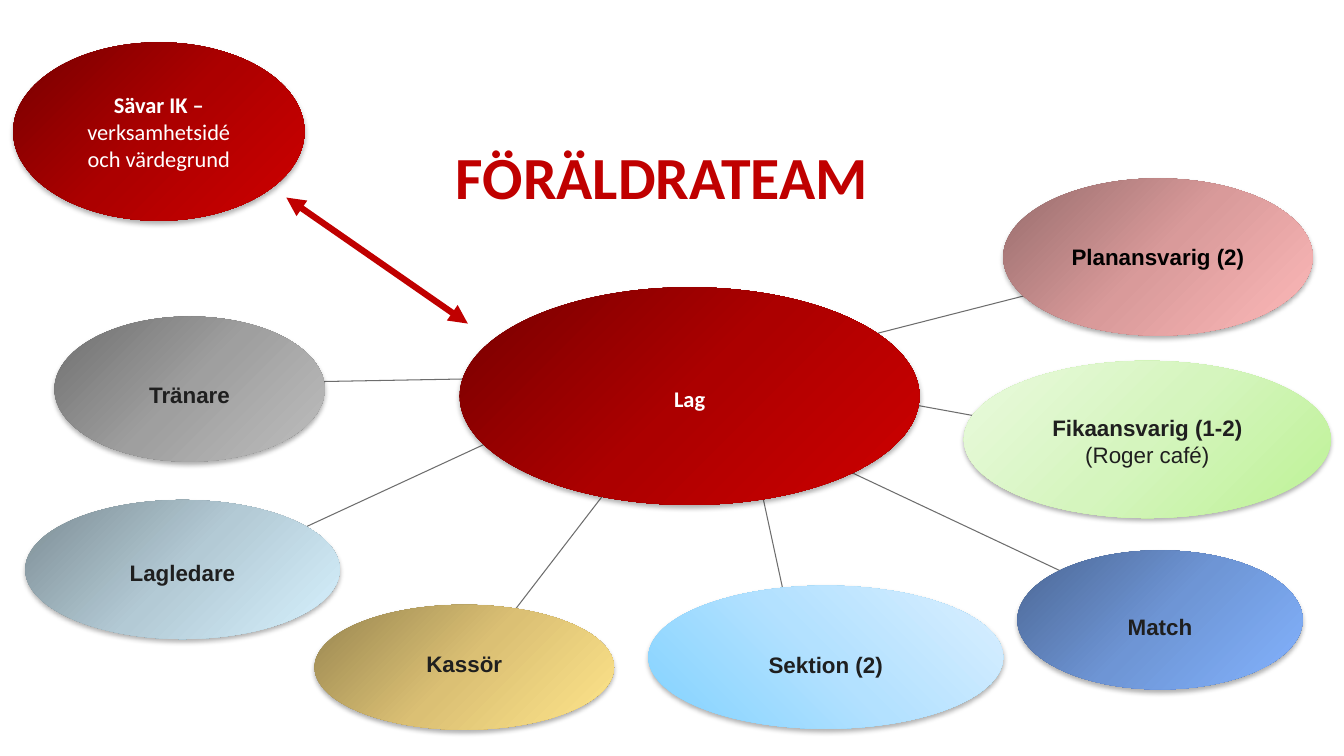
from lxml import etree
from pptx import Presentation
from pptx.dml.color import RGBColor
from pptx.enum.shapes import MSO_CONNECTOR, MSO_SHAPE
from pptx.enum.text import MSO_ANCHOR, MSO_AUTO_SIZE, PP_ALIGN
from pptx.oxml import parse_xml
from pptx.oxml.ns import nsdecls, qn
from pptx.util import Pt

PX = 9144  # 100 px to the inch
OVAL, STRAIGHT = MSO_SHAPE.OVAL, MSO_CONNECTOR.STRAIGHT
CENTER, LEFT = PP_ALIGN.CENTER, PP_ALIGN.LEFT
MIDDLE, TOP = MSO_ANCHOR.MIDDLE, MSO_ANCHOR.TOP

RED = RGBColor(0xC0, 0x00, 0x00)
GREY = RGBColor(0x6D, 0x6D, 0x6D)
WHITE = RGBColor(0xFF, 0xFF, 0xFF)
BLACK = RGBColor(0x00, 0x00, 0x00)
INK = RGBColor(0x1F, 0x1F, 0x1F)


def gradient(*hexes):
    return [RGBColor.from_string(h) for h in hexes]


REDS = gradient("770000", "AC0000", "CE0000")
GREYS = gradient("6E6E6E", "9F9F9F", "BFBFBF")
STEELS = gradient("7C8C93", "B3CAD5", "D7F2FF")
PINKS = gradient("956B6B", "D99A9A", "FFBABA")
BLUES = gradient("4B6693", "6E95D5", "83B3FF")
GREENS = gradient("BDF295", "D5F5BE", "EAFADE")
GOLDS = gradient("978550", "DBC074", "FFE68B")
SKIES = gradient("81D2FF", "B3E1FF", "DAEFFF")

# text, box, colours, gradient angle, text colour, font, text shift down
ROLES = [
    ("Tränare", (54, 314, 268, 144), GREYS, 45, INK, "Arial", 5),
    ("Lagledare", (25, 496, 312, 138), STEELS, 45, INK, "Arial", 3),
    ("Sävar IK –\nverksamhetsidé och värdegrund", (13, 42, 289, 177),
     REDS, 45, WHITE, "Calibri", 0),
    ("Planansvarig (2)", (995, 177, 307, 156), PINKS, 45, BLACK, "Arial", 0),
    ("Lag", (456, 285, 456, 216), REDS, 45, WHITE, "Calibri", 2),
    ("Match", (1009, 546, 283, 138), BLUES, 45, INK, "Arial", 7),
    ("Fikaansvarig (1-2)\n(Roger café)", (956, 358, 364, 156),
     GREENS, 225, INK, "Arial", 2),
    ("Kassör", (312, 600, 297, 124), GOLDS, 45, INK, "Arial", -4),
    ("Sektion (2)", (643, 581, 352, 142), SKIES, 315, INK, "Arial", 7),
]

SPOKES = [
    (294, 379, 514, 375), (266, 540, 534, 416), (490, 632, 623, 459),
    (791, 652, 754, 481), (869, 331, 1049, 285), (1051, 566, 845, 469),
    (1024, 423, 898, 400),
]


def emu(lengths):
    return [n * PX for n in lengths]


def set_margins(tf, left, top, right, bottom):
    tf.margin_left, tf.margin_top, tf.margin_right, tf.margin_bottom = emu(
        (left, top, right, bottom))


def format_font(font, name, size, color, bold):
    font.name, font.size, font.bold = name, Pt(size), bold
    font.color.rgb = color


def set_gradient(sp, colors, angle):
    """Fill with three even stops; the shape's line must already be set."""
    stops = "".join(
        f'<a:gs pos="{i * 50000}"><a:srgbClr val="{c}"/></a:gs>'
        for i, c in enumerate(colors))
    fill = parse_xml(
        f'<a:gradFill {nsdecls("a")} rotWithShape="1"><a:gsLst>{stops}</a:gsLst>'
        f'<a:lin ang="{angle * 60000}" scaled="0"/></a:gradFill>')
    sp._element.spPr.find(qn("a:ln")).addprevious(fill)


def add_shadow(sp):
    sp.shadow.inherit = False
    sp._element.spPr.find(qn("a:effectLst")).append(parse_xml(
        f'<a:outerShdw {nsdecls("a")} blurRad="{Pt(3.5)}" dist="{Pt(2.2)}" '
        'dir="5400000" rotWithShape="0"><a:srgbClr val="000000">'
        '<a:alpha val="31000"/></a:srgbClr></a:outerShdw>'))


def add_role(s, text, box, colors, angle, text_color, font, shift):
    """Add an ellipse whose first line is bold."""
    sp = s.shapes.add_shape(OVAL, *emu(box))
    sp.line.fill.background()
    set_gradient(sp, colors, angle)
    add_shadow(sp)
    tf = sp.text_frame
    tf.word_wrap = True
    tf.vertical_anchor = MIDDLE
    set_margins(tf, 13, 13 + shift, 13, 13 - shift)
    tf.text = text
    for i, p in enumerate(tf.paragraphs):
        p.alignment = CENTER
        format_font(p.runs[0].font, font, 16, text_color, i == 0)


def add_line(s, ends, color, width, arrows=False):
    line = s.shapes.add_connector(STRAIGHT, *emu(ends))
    line.line.color.rgb = color
    line.line.width = Pt(width)
    if arrows:
        for tag in ("a:headEnd", "a:tailEnd"):
            etree.SubElement(line.line._get_or_add_ln(), qn(tag), type="triangle")
    etree.SubElement(line._element.spPr, qn("a:effectLst"))


def add_title(s, text, box):
    title = s.shapes.title
    title.left, title.top, title.width, title.height = emu(box)
    tf = title.text_frame
    tf.auto_size = MSO_AUTO_SIZE.NONE
    tf.word_wrap = True
    tf.vertical_anchor = TOP
    set_margins(tf, 10, 5, 10, 5)
    tf.text = text
    p = tf.paragraphs[0]
    p.alignment = LEFT
    format_font(p.runs[0].font, "Calibri", 42.7, RED, True)


def main():
    prs = Presentation()
    prs.slide_width, prs.slide_height = emu((1333, 750))
    s = prs.slides.add_slide(prs.slide_layouts[5])
    add_title(s, "FÖRÄLDRATEAM", (442, 134, 628, 82))
    for ends in SPOKES:
        add_line(s, ends, GREY, 0.75)
    for role in ROLES:
        add_role(s, *role)
    add_line(s, (284, 196, 464, 321), RED, 4.5, arrows=True)
    prs.save("out.pptx")


if __name__ == "__main__":
    main()
